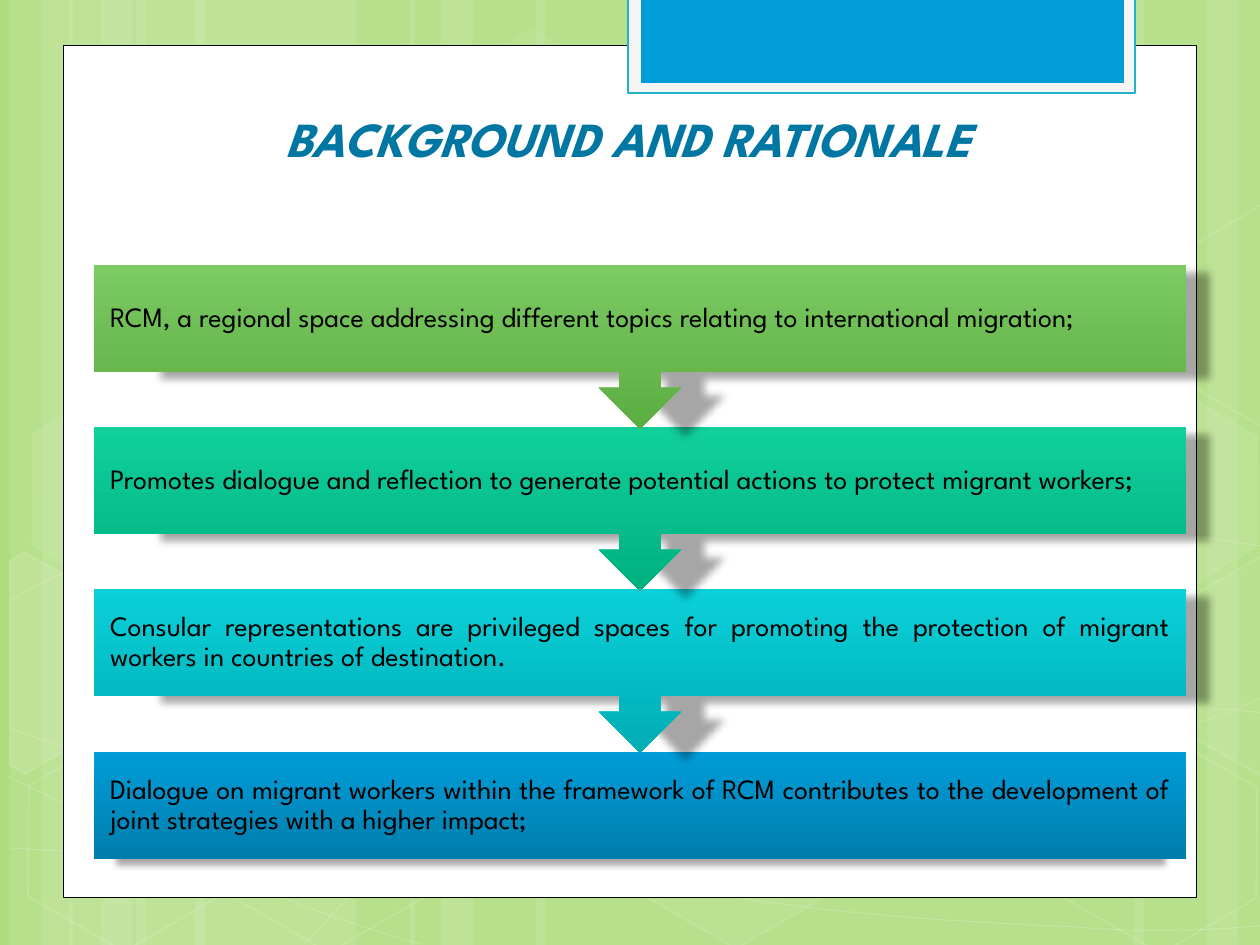
"""Build the "Background and rationale" slide: a four-step flow on a green backdrop."""
import lxml.etree
import pptx
import pptx.dml.color
import pptx.enum.shapes
import pptx.enum.text
import pptx.oxml.ns
import pptx.util

RGB = pptx.dml.color.RGBColor
SHAPE = pptx.enum.shapes.MSO_SHAPE
ALIGN = pptx.enum.text.PP_ALIGN
ANCHOR = pptx.enum.text.MSO_ANCHOR
qn = pptx.oxml.ns.qn

WHITE, BLACK = RGB(255, 255, 255), RGB(0, 0, 0)
BACKDROP = RGB(0xAF, 0xDD, 0x7F)
TAB_FRAME, TAB_EDGE = RGB(0xF5, 0xF5, 0xF5), RGB(0x21, 0xB2, 0xC9)
BLUE, DEEP_BLUE = RGB(0x00, 0x9D, 0xD9), RGB(0x00, 0x7D, 0xAC)
CYAN, DEEP_CYAN = RGB(0x0B, 0xD0, 0xD9), RGB(0x00, 0xAD, 0xB5)
TEAL, DEEP_TEAL = RGB(0x10, 0xCF, 0x9B), RGB(0x00, 0xB1, 0x81)
GREEN, DEEP_GREEN = RGB(0x7C, 0xCA, 0x62), RGB(0x5C, 0xAD, 0x42)
TITLE_BLUE = RGB(0x00, 0x76, 0xA3)

STRIPES = [(136, 220), (10, 63), (42, 104), (195, 220), (69, 63), (101, 104), (924, 220),
           (1207, 63), (1134, 104), (536, 388), (410, 63), (441, 104)]
CURVES = [
    [(9, 848), (77, 852), (145, 856), (239, 854), (334, 853), (451, 851), (577, 838),
     (703, 825), (882, 801), (998, 777), (1113, 753), (1231, 715), (1269, 694)],
    [(9, 601), (45, 581), (82, 562), (152, 543), (224, 524), (326, 496), (437, 488),
     (549, 480), (685, 478), (824, 488), (963, 498), (1193, 537), (1269, 547)],
    [(8, 777), (160, 847), (311, 916), (421, 944)],
    [(9, 728), (48, 742), (88, 756), (161, 776), (234, 795), (344, 827), (450, 848),
     (554, 869), (687, 892), (791, 905), (896, 919), (1008, 924), (1075, 927),
     (1140, 932), (1158, 930), (1191, 930), (1223, 929), (1246, 927), (1269, 925)],
    [(305, 944), (328, 919), (350, 893), (381, 871), (411, 848), (454, 823), (489, 805),
     (524, 788), (546, 780), (592, 767), (638, 755), (722, 738), (766, 728), (811, 719),
     (818, 719), (857, 717), (896, 713), (958, 709), (1000, 708), (1045, 707),
     (1116, 708), (1116, 708), (1144, 708), (1172, 708), (1201, 708), (1223, 709),
     (1246, 711), (1256, 712), (1268, 713), (1264, 712), (1268, 713)],
]
HEXAGONS = [(421, 45, 4, 8), (626, 742, 6, 12), (14, 745, 0, 12), (18, 393, 7, 8),
            (219, 746, 0, 12), (949, 571, 10, 12), (1051, 747, 0, 12), (1051, 396, 7, 8)]
CUT_HEXAGONS = [
    ([(10, 561), (24, 552), (121, 607), (120, 718), (25, 774), (10, 765)], 10),
    ([(1167, 611), (1261, 556), (1271, 562), (1271, 772), (1263, 777), (1167, 722)], 4),
    ([(1167, 261), (1261, 205), (1273, 212), (1271, 422), (1263, 427), (1167, 372)], 0),
]
STEPS = [
    ("RCM, a regional space addressing different topics relating to international migration;",
     GREEN, DEEP_GREEN),
    ("Promotes dialogue and reflection to generate potential actions to protect migrant workers;",
     TEAL, DEEP_TEAL),
    ("Consular representations are privileged spaces for promoting the protection of migrant "
     "workers in countries of destination.", CYAN, DEEP_CYAN),
    ("Dialogue on migrant workers within the framework of RCM contributes to the development of "
     "joint strategies with a higher impact;", BLUE, DEEP_BLUE),
]
FIRST_STEP, LAST_STEP = 265, 752


def px(n):
    """Turn px into EMU."""
    return pptx.util.Emu(round(n * 914400 / 126))


class Deck:
    """Holds the style and the current slide."""

    font = "League Spartan"

    def __init__(self, prs):
        """Add a blank slide with the backdrop colour."""
        self.s = prs.slides.add_slide(prs.slide_layouts[6])
        self.s.background.fill.solid()
        self.s.background.fill.fore_color.rgb = BACKDROP

    def fade(self, el, percent):
        """Set the opacity of the solid colour inside an element."""
        color = el.find(qn("a:solidFill")).find(qn("a:srgbClr"))
        lxml.etree.SubElement(color, qn("a:alpha"), val=str(percent * 1000))

    def paint(self, sp, fill=None, opacity=100, line=None, width=1, line_opacity=100):
        """Give a shape its fill and line, without a shadow."""
        sp.shadow.inherit = False
        props = sp._element.spPr
        if fill is None or not opacity:
            sp.fill.background()
        else:
            sp.fill.solid()
            sp.fill.fore_color.rgb = fill
            if opacity < 100:
                self.fade(props, opacity)
        if line is None:
            sp.line.fill.background()
        else:
            sp.line.color.rgb = line
            sp.line.width = pptx.util.Pt(width)
            if line_opacity < 100:
                self.fade(props.find(qn("a:ln")), line_opacity)
        return sp

    def shape(self, kind, x, y, w, h, **style):
        """Add a painted preset shape."""
        sp = self.s.shapes.add_shape(kind, px(x), px(y), px(w), px(h))
        return self.paint(sp, **style)

    def outline(self, points, close, **style):
        """Add a painted outline through points."""
        fb = self.s.shapes.build_freeform(*points[0], scale=914400 / 126)
        fb.add_line_segments(points[1:], close=close)
        return self.paint(fb.convert_to_shape(), **style)

    def curve(self, points):
        """Add a faint open curve, each three points after the first being one cubic segment."""
        sp = self.outline(points, False, line=WHITE, width=0.5, line_opacity=20)
        lines = list(sp._element.spPr.iter(qn("a:lnTo")))
        for i in range(0, len(lines), 3):
            cubic = lxml.etree.Element(qn("a:cubicBezTo"))
            lines[i].addprevious(cubic)
            for ln in lines[i:i + 3]:
                cubic.append(ln[0])
                ln.getparent().remove(ln)

    def hexagon(self, x, y, opacity, line_opacity):
        """Add a tilted, faint hexagon."""
        sp = self.shape(SHAPE.HEXAGON, x, y, 220, 192, fill=WHITE, opacity=opacity,
                        line=WHITE, line_opacity=line_opacity)
        sp.adjustments[0] = 0.285
        sp.rotation = 30

    def drop_shadow(self, sp, distance, angle):
        """Add a narrowed soft shadow; distance in points, angle in degrees."""
        effects = sp._element.spPr.find(qn("a:effectLst"))
        shadow = lxml.etree.SubElement(
            effects, qn("a:outerShdw"), blurRad=str(pptx.util.Pt(4)),
            dist=str(pptx.util.Pt(distance)), dir=str(angle * 60000), sx="96000", sy="100000",
            algn="ctr", rotWithShape="0")
        color = lxml.etree.SubElement(shadow, qn("a:srgbClr"), val=str(BLACK))
        lxml.etree.SubElement(color, qn("a:alpha"), val="34000")

    def text(self, sp, text, size, color, align, anchor, bold=False, italic=False):
        """Write one run into a shape."""
        tf = sp.text_frame
        tf.word_wrap = True
        tf.vertical_anchor = anchor
        p = tf.paragraphs[0]
        p.alignment = align
        r = p.add_run()
        r.text = text
        r.font.name, r.font.size = self.font, pptx.util.Pt(size)
        r.font.bold, r.font.italic = bold, italic
        r.font.color.rgb = color
        return tf

    def title(self, text, x, y, w, h):
        """Add the slide title."""
        sp = self.s.shapes.add_textbox(px(x), px(y), px(w), px(h))
        self.text(sp, text, 28, TITLE_BLUE, ALIGN.CENTER, ANCHOR.BOTTOM, True, True)

    def step(self, text, y, top, bottom, last):
        """Add one step of the flow, with an arrow to the next unless it is the last."""
        kind, h = (SHAPE.RECTANGLE, 107) if last else (SHAPE.DOWN_ARROW_CALLOUT, 164)
        sp = self.shape(kind, 94, y, 1092, h)
        sp.fill.gradient()
        sp.fill.gradient_angle = 270
        for stop, color in zip(sp.fill.gradient_stops, (top, bottom)):
            stop.color.rgb = color
        self.drop_shadow(sp, *((3.5, 90) if last else (25.4, 8)))
        box = self.s.shapes.add_textbox(px(94), px(y), px(1092), px(107))
        tf = self.text(box, text, 16, BLACK, ALIGN.JUSTIFY, ANCHOR.MIDDLE)
        tf.margin_left = tf.margin_right = tf.margin_top = tf.margin_bottom = px(16)
        tf.paragraphs[0].line_spacing = 0.9


def main():
    """Build and save the slide."""
    prs = pptx.Presentation()
    prs.slide_width, prs.slide_height = px(1260), px(945)
    deck = Deck(prs)
    for x, w in STRIPES:
        deck.shape(SHAPE.RECTANGLE, x, 0, w, 945, fill=WHITE, opacity=10)
    for points in CURVES:
        deck.curve(points)
    for hexagon in HEXAGONS:
        deck.hexagon(*hexagon)
    for points, opacity in CUT_HEXAGONS:
        deck.outline(points, True, fill=WHITE, opacity=opacity, line=WHITE, line_opacity=12)
    deck.shape(SHAPE.RECTANGLE, 63, 45, 1134, 853, fill=WHITE, line=BLACK, width=0.5)
    deck.shape(SHAPE.RECTANGLE, 628, -3, 507, 96, fill=TAB_FRAME, line=TAB_EDGE, width=1.25)
    deck.shape(SHAPE.RECTANGLE, 641, -3, 483, 86, fill=BLUE)
    deck.title("BACKGROUND AND RATIONALE", 144, 102, 968, 72)
    final = len(STEPS) - 1
    for i, (text, top, bottom) in reversed(list(enumerate(STEPS))):
        y = FIRST_STEP + i * (LAST_STEP - FIRST_STEP) // final
        deck.step(text, y, top, bottom, i == final)
    prs.save("out.pptx")


if __name__ == "__main__":
    main()
